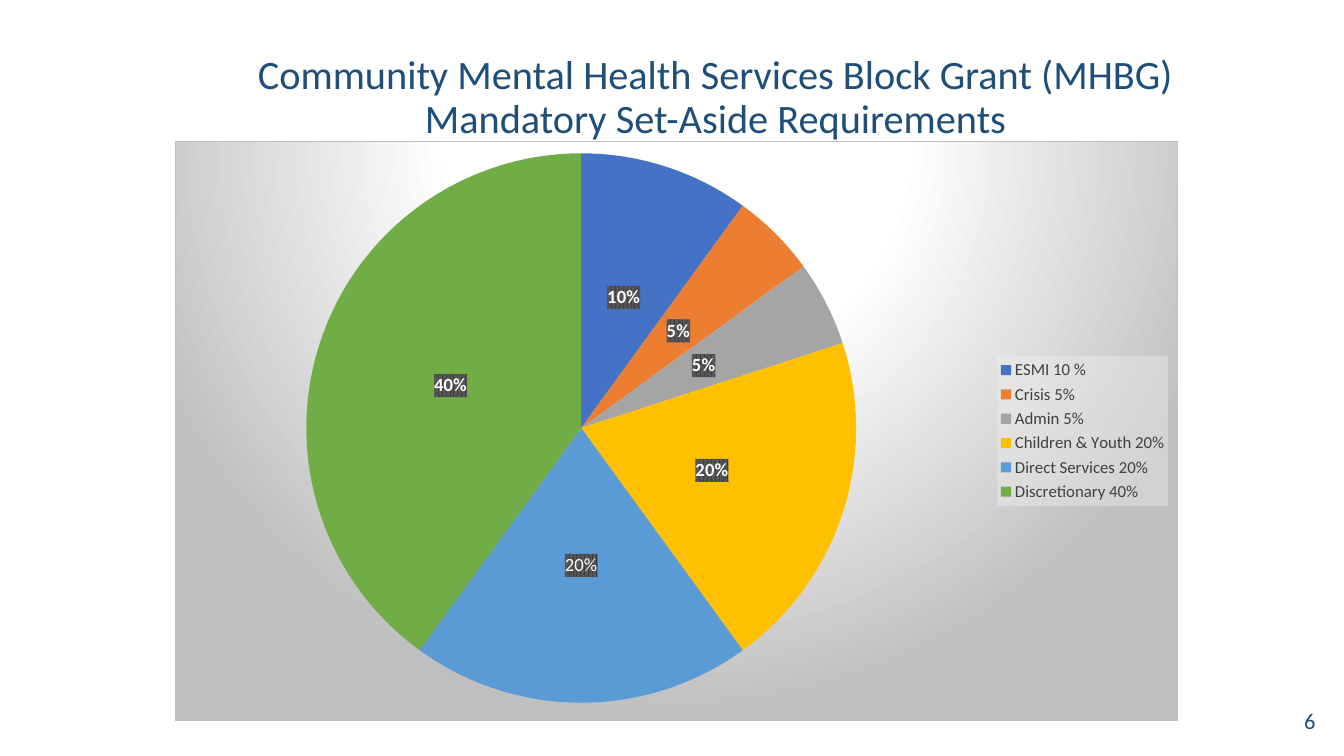
from pptx import Presentation
from pptx.chart.data import CategoryChartData
from pptx.dml.color import RGBColor
from pptx.enum.chart import XL_CHART_TYPE, XL_LABEL_POSITION, XL_LEGEND_POSITION
from pptx.enum.text import MSO_ANCHOR, PP_ALIGN
from pptx.oxml import parse_xml
from pptx.oxml.ns import nsdecls, qn
from pptx.util import Cm, Pt

PIE = XL_CHART_TYPE.PIE
LABEL_CENTER = XL_LABEL_POSITION.CENTER
LEGEND_RIGHT = XL_LEGEND_POSITION.RIGHT
BOTTOM, MIDDLE = MSO_ANCHOR.BOTTOM, MSO_ANCHOR.MIDDLE
CENTER, RIGHT = PP_ALIGN.CENTER, PP_ALIGN.RIGHT

FONT = "Calibri"
NAVY = RGBColor(0x1F, 0x4E, 0x79)
BLACK = RGBColor(0, 0, 0)
WHITE = RGBColor(0xFF, 0xFF, 0xFF)
DARK_GRAY = RGBColor(0x40, 0x40, 0x40)
BLUE = RGBColor(0x44, 0x72, 0xC4)
ORANGE = RGBColor(0xED, 0x7D, 0x31)
GRAY = RGBColor(0xA5, 0xA5, 0xA5)
GOLD = RGBColor(0xFF, 0xC0, 0x00)
LIGHT_BLUE = RGBColor(0x5B, 0x9B, 0xD5)
GREEN = RGBColor(0x70, 0xAD, 0x47)

SET_ASIDES = [
    ("ESMI 10 %", 10, BLUE),
    ("Crisis 5%", 5, ORANGE),
    ("Admin 5%", 5, GRAY),
    ("Children & Youth 20%", 20, GOLD),
    ("Direct Services 20%", 20, LIGHT_BLUE),
    ("Discretionary 40%", 40, GREEN),
]
DIRECT_SERVICES = 4

CHART_FILL = """<a:gradFill><a:gsLst>
<a:gs pos="0"><a:srgbClr val="FFFFFF"/></a:gs>
<a:gs pos="39000"><a:srgbClr val="FFFFFF"/></a:gs>
<a:gs pos="100000"><a:srgbClr val="BFBFBF"/></a:gs></a:gsLst>
<a:path path="circle"><a:fillToRect l="50000" t="-80000" r="50000" b="180000"/></a:path>
</a:gradFill>
<a:ln w="9525"><a:solidFill><a:srgbClr val="BFBFBF"/></a:solidFill></a:ln>"""
LEGEND_FILL = """<a:solidFill><a:srgbClr val="F2F2F2"><a:alpha val="39000"/></a:srgbClr>
</a:solidFill>"""
LABEL_FILL = """<a:pattFill prst="pct75"><a:fgClr><a:srgbClr val="404040"/></a:fgClr>
<a:bgClr><a:srgbClr val="595959"/></a:bgClr></a:pattFill>"""


def format_after(element, fill):
    """Add shape properties holding the given fill XML right after element."""
    element.addnext(parse_xml(f'<c:spPr {nsdecls("c", "a")}>{fill}</c:spPr>'))


def layout_xml(left, top, width, height, target=""):
    """Return a manual chart layout, in fractions of the chart's size."""
    return parse_xml(
        f'<c:layout {nsdecls("c")}><c:manualLayout>{target}'
        '<c:xMode val="edge"/><c:yMode val="edge"/>'
        f'<c:x val="{left}"/><c:y val="{top}"/><c:w val="{width}"/><c:h val="{height}"/>'
        '</c:manualLayout></c:layout>')


deck = Presentation()
deck.slide_width, deck.slide_height = Cm(33.87), Cm(19.05)
page = deck.slides.add_slide(deck.slide_layouts[6])

# Title and page number
texts = [
    ("Community Mental Health Services Block Grant (MHBG)\vMandatory Set-Aside Requirements",
     (4.19, 1.4, 27.69, 3.28), 28.8, CENTER, BOTTOM, 0.9),
    ("6", (25.78, 17.65, 7.62, 1.02), 16, RIGHT, MIDDLE, 1),
]
for text, place, size, alignment, anchor, spacing in texts:
    box = page.shapes.add_textbox(*[Cm(length) for length in place])
    frame = box.text_frame
    frame.word_wrap = True
    frame.vertical_anchor = anchor
    if anchor == BOTTOM:
        frame.margin_top, frame.margin_bottom = 0, Cm(1.1)
    para = frame.paragraphs[0]
    para.text = text
    para.alignment = alignment
    para.line_spacing = spacing
    for span in para.runs:
        span.font.name = FONT
        span.font.size = Pt(size)
        span.font.color.rgb = NAVY

# Pie chart
data = CategoryChartData()
data.categories = [name for name, share, color in SET_ASIDES]
data.add_series("Series 1", [share for name, share, color in SET_ASIDES])
chart = page.shapes.add_chart(PIE, Cm(4.4), Cm(3.56), Cm(25.3), Cm(14.6), data).chart
chart.has_title = False
chart.font.name = FONT
chart.font.size = Pt(10)
chart.font.color.rgb = BLACK
chart_space = chart.element
format_after(chart_space.find(qn("c:chart")), CHART_FILL)

plot_area = chart_space.find(".//" + qn("c:plotArea"))
for old_layout in plot_area.findall(qn("c:layout")):
    plot_area.remove(old_layout)
plot_area.insert(0, layout_xml(0.13, 0.02, 0.55, 0.95, '<c:layoutTarget val="inner"/>'))

plot = chart.plots[0]
plot.vary_by_categories = True
series = plot.series[0]
for index, (name, share, color) in enumerate(SET_ASIDES):
    fill = series.points[index].format.fill
    fill.solid()
    fill.fore_color.rgb = color

# Percentage labels
labels = series.data_labels
labels.show_value = False
labels.show_percentage = True
labels.number_format = "0%"
labels.number_format_is_linked = False
labels.position = LABEL_CENTER
labels.font.name = FONT
labels.font.size = Pt(13.3)
labels.font.bold = True
labels.font.color.rgb = WHITE
labels_xml = chart_space.find(".//" + qn("c:dLbls"))
format_after(labels_xml.find(qn("c:numFmt")), LABEL_FILL)

direct_label = series.points[DIRECT_SERVICES].data_label
direct_label.text_frame.text = "20%"
direct_label.position = LABEL_CENTER
span = direct_label.text_frame.paragraphs[0].runs[0]
span.font.name = FONT
span.font.size = Pt(13.3)
span.font.bold = False
span.font.color.rgb = WHITE
direct_xml = labels_xml.find(qn("c:dLbl"))
for old_format in direct_xml.findall(qn("c:spPr")):
    direct_xml.remove(old_format)
format_after(direct_xml.find(qn("c:tx")), LABEL_FILL)

# Legend
chart.has_legend = True
legend = chart.legend
legend.position = LEGEND_RIGHT
legend.include_in_layout = False
legend.font.name = FONT
legend.font.size = Pt(12)
legend.font.color.rgb = DARK_GRAY
legend_xml = chart_space.find(".//" + qn("c:legend"))
for old_layout in legend_xml.findall(qn("c:layout")):
    legend_xml.remove(old_layout)
legend_xml.find(qn("c:legendPos")).addnext(layout_xml(0.82, 0.37, 0.17, 0.26))
format_after(legend_xml.find(qn("c:overlay")), LEGEND_FILL)

deck.save("out.pptx")
